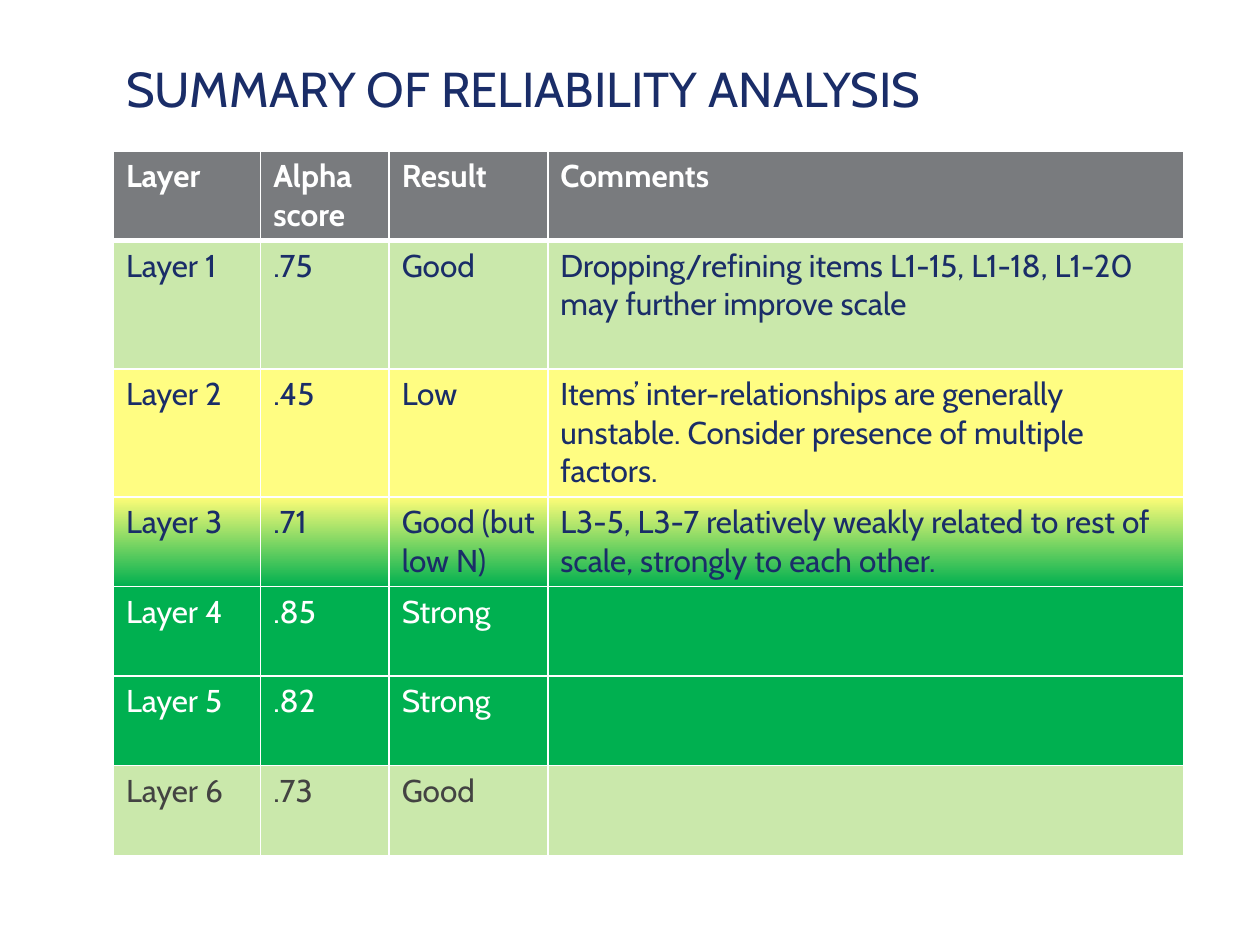
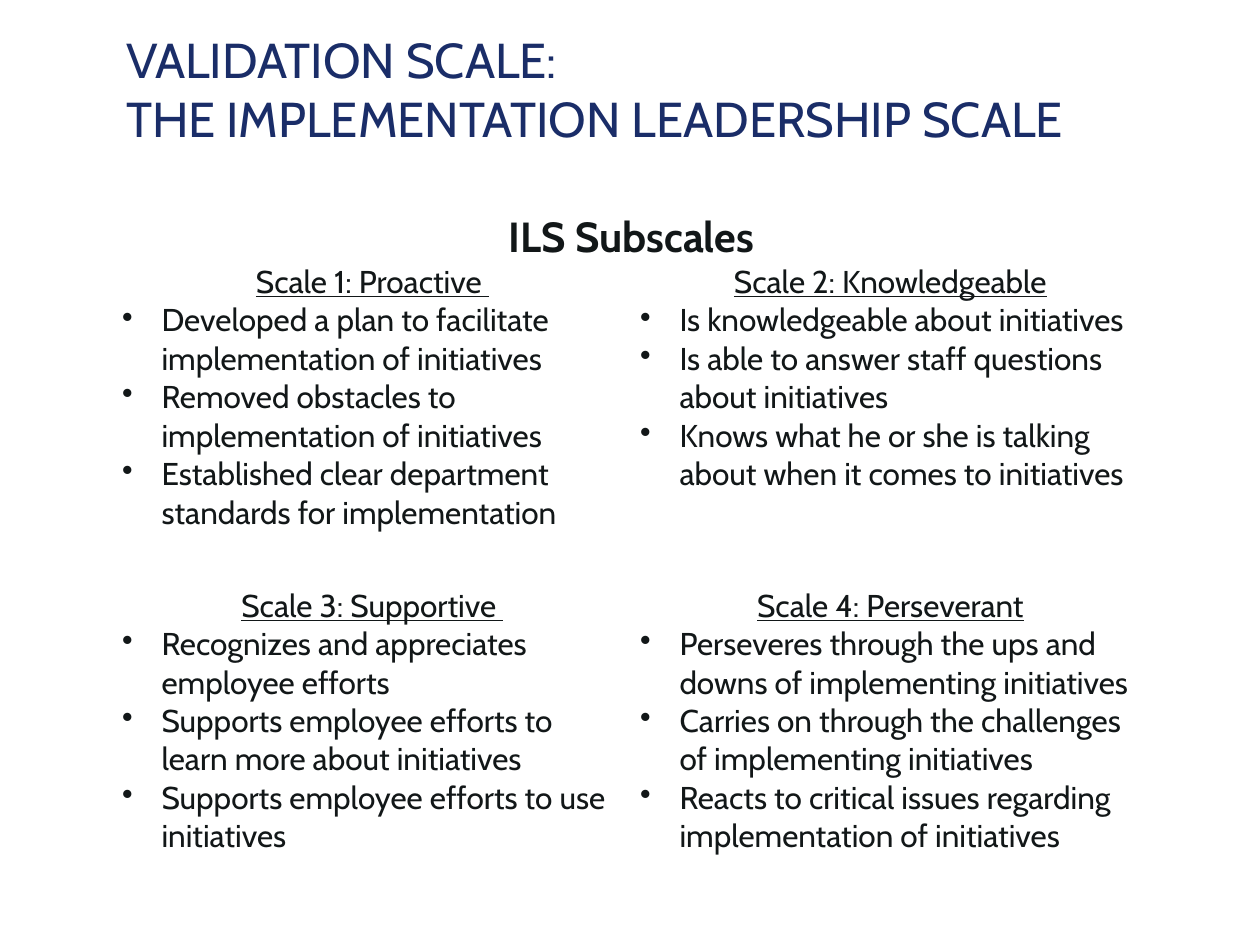
from dataclasses import dataclass

import pptx
import pptx.dml.color
import pptx.enum.text
import pptx.oxml
import pptx.oxml.ns
import pptx.util
from lxml import etree

Pt = pptx.util.Pt
RGBColor = pptx.dml.color.RGBColor
ALIGN = pptx.enum.text.PP_ALIGN
ANCHOR = pptx.enum.text.MSO_ANCHOR


@dataclass(frozen=True)
class Theme:
    font: str = "Cabin"
    title_size: int = 28
    heading_size: int = 24
    body_size: int = 18
    navy: str = "1A2D68"
    ink: str = "121718"
    charcoal: str = "434342"
    white: str = "FFFFFF"
    header_gray: str = "797B7E"
    lime: str = "92D050"
    yellow: str = "FFFC00"
    pale_yellow: str = "FFFD78"
    green: str = "00B050"


theme = Theme()
LEFT = 64.8


def style(paragraph, size, color, bold=False):
    font = paragraph.font
    font.name, font.size, font.bold = theme.font, Pt(size), bold
    font.color.rgb = RGBColor.from_string(color)


def add_bordered_table(slide, top, column_widths, row_heights):
    """Add an unbanded table with white rules, the heaviest below its first row."""
    frame = slide.shapes.add_table(
        len(row_heights), len(column_widths), Pt(LEFT), Pt(top),
        Pt(sum(column_widths)), Pt(sum(row_heights)))
    table = frame.table
    table.first_row = table.horz_banding = False
    for column, width in zip(table.columns, column_widths):
        column.width = Pt(width)
    for row_index, height in enumerate(row_heights):
        table.rows[row_index].height = Pt(height)
        for cell in table.rows[row_index].cells:
            properties = cell._tc.get_or_add_tcPr()
            for side in "LRTB":
                heavy = (row_index, side) in ((0, "B"), (1, "T"))
                properties.append(pptx.oxml.parse_xml(
                    f'<a:ln{side} {pptx.oxml.ns.nsdecls("a")} w="{Pt(3 if heavy else 1)}">'
                    f'<a:solidFill><a:srgbClr val="{theme.white}"/></a:solidFill></a:ln{side}>'))
            cell.fill.background()
    return table


presentation = pptx.Presentation()
presentation.slide_width, presentation.slide_height = Pt(720), Pt(540)

slides = []
for title_text in ("SUMMARY OF RELIABILITY ANALYSIS",
                   "VALIDATION SCALE: \vTHE IMPLEMENTATION LEADERSHIP SCALE"):
    slide = presentation.slides.add_slide(presentation.slide_layouts[5])
    title = slide.shapes.title
    title.left, title.top, title.width, title.height = Pt(LEFT), Pt(28.8), Pt(592), Pt(43.2)
    title.text_frame.text = title_text
    title.text_frame.auto_size = pptx.enum.text.MSO_AUTO_SIZE.NONE
    title.text_frame.vertical_anchor = ANCHOR.MIDDLE
    title_paragraph = title.text_frame.paragraphs[0]
    title_paragraph.alignment = ALIGN.LEFT
    style(title_paragraph, theme.title_size, theme.navy)
    slides.append(slide)
reliability_slide, scale_slide = slides

# Reliability table: each row has its texts, text colour, fill colours and opacity in percent
reliability_rows = [
    (("Layer", "Alpha score", "Result", "Comments"),
     theme.white, [theme.header_gray], 100),
    (("Layer 1", ".75", "Good",
      "Dropping/refining items L1-15, L1-18, L1-20 may further improve scale"),
     theme.navy, [theme.lime], 48),
    (("Layer 2", ".45", "Low",
      "Items’ inter-relationships are generally unstable. "
      "Consider presence of multiple factors."),
     theme.navy, [theme.yellow], 49),
    (("Layer 3", ".71", "Good (but low N)",
      "L3-5, L3-7 relatively weakly related to rest of scale, strongly to each other."),
     theme.navy, [theme.pale_yellow, theme.green], 100),
    (("Layer 4", ".85", "Strong", ""), theme.white, [theme.green], 100),
    (("Layer 5", ".82", "Strong", ""), theme.white, [theme.green], 100),
    (("Layer 6", ".73", "Good", ""), theme.charcoal, [theme.lime], 48),
]
two_lines, three_lines = 51.2, 73.2
reliability_table = add_bordered_table(
    reliability_slide, 86.4, [84.2, 73.4, 90.7, 363.6],
    [two_lines] + [three_lines] * 2 + [two_lines] * 4)
for row_index, (texts, text_color, fill_colors, opacity) in enumerate(reliability_rows):
    for cell, text in zip(reliability_table.rows[row_index].cells, texts):
        cell.text = text
        style(cell.text_frame.paragraphs[0], theme.body_size, text_color, bold=row_index == 0)
        if len(fill_colors) > 1:
            cell.fill.gradient()
            cell.fill.gradient_angle = 270
            for stop, color in zip(cell.fill.gradient_stops, fill_colors):
                stop.color.rgb = RGBColor.from_string(color)
        else:
            cell.fill.solid()
            cell.fill.fore_color.rgb = RGBColor.from_string(fill_colors[0])
        if opacity < 100:
            color_element = cell._tc.tcPr.find(
                pptx.oxml.ns.qn("a:solidFill") + "/" + pptx.oxml.ns.qn("a:srgbClr"))
            etree.SubElement(color_element, pptx.oxml.ns.qn("a:alpha"), val=str(opacity * 1000))

# Subscales: a heading across both columns, then a two by two grid
subscales = [
    ("Scale 1: Proactive ",
     "Developed a plan to facilitate implementation of initiatives",
     "Removed obstacles to implementation of initiatives",
     "Established clear department standards for implementation"),
    ("Scale 2: Knowledgeable",
     "Is knowledgeable about initiatives",
     "Is able to answer staff questions about initiatives",
     "Knows what he or she is talking about when it comes to initiatives"),
    ("Scale 3: Supportive ",
     "Recognizes and appreciates employee efforts",
     "Supports employee efforts to learn more about initiatives",
     "Supports employee efforts to use initiatives"),
    ("Scale 4: Perseverant",
     "Perseveres through the ups and downs of implementing initiatives",
     "Carries on through the challenges of implementing initiatives",
     "Reacts to critical issues regarding implementation of initiatives"),
]
subscale_table = add_bordered_table(scale_slide, 121, [296, 296], [29.3, 185, 185])
for cell in subscale_table.iter_cells():
    cell.margin_left = cell.margin_right = Pt(5)
    cell.margin_top = cell.margin_bottom = Pt(0)

heading_cell = subscale_table.cell(0, 0)
heading_cell.merge(subscale_table.cell(0, 1))
heading_cell.text = "ILS Subscales"
heading = heading_cell.text_frame.paragraphs[0]
heading.alignment = ALIGN.CENTER
style(heading, theme.heading_size, theme.ink, bold=True)

bullet_indent = Pt(22.5)
for index, lines in enumerate(subscales):
    cell = subscale_table.cell(1 + index // 2, index % 2)
    cell.text = "\n".join(lines)
    scale_name, *items = cell.text_frame.paragraphs
    for paragraph in cell.text_frame.paragraphs:
        style(paragraph, theme.body_size, theme.ink)
    scale_name.alignment = ALIGN.CENTER
    scale_name.font.underline = True
    for item in items:
        properties = item._p.get_or_add_pPr()
        properties.set("marL", str(bullet_indent))
        properties.set("indent", str(-bullet_indent))
        bullet = pptx.oxml.parse_xml(f'<a:buChar {pptx.oxml.ns.nsdecls("a")} char="•"/>')
        properties.insert_element_before(bullet, "a:tabLst", "a:defRPr", "a:extLst")

presentation.save("out.pptx")
